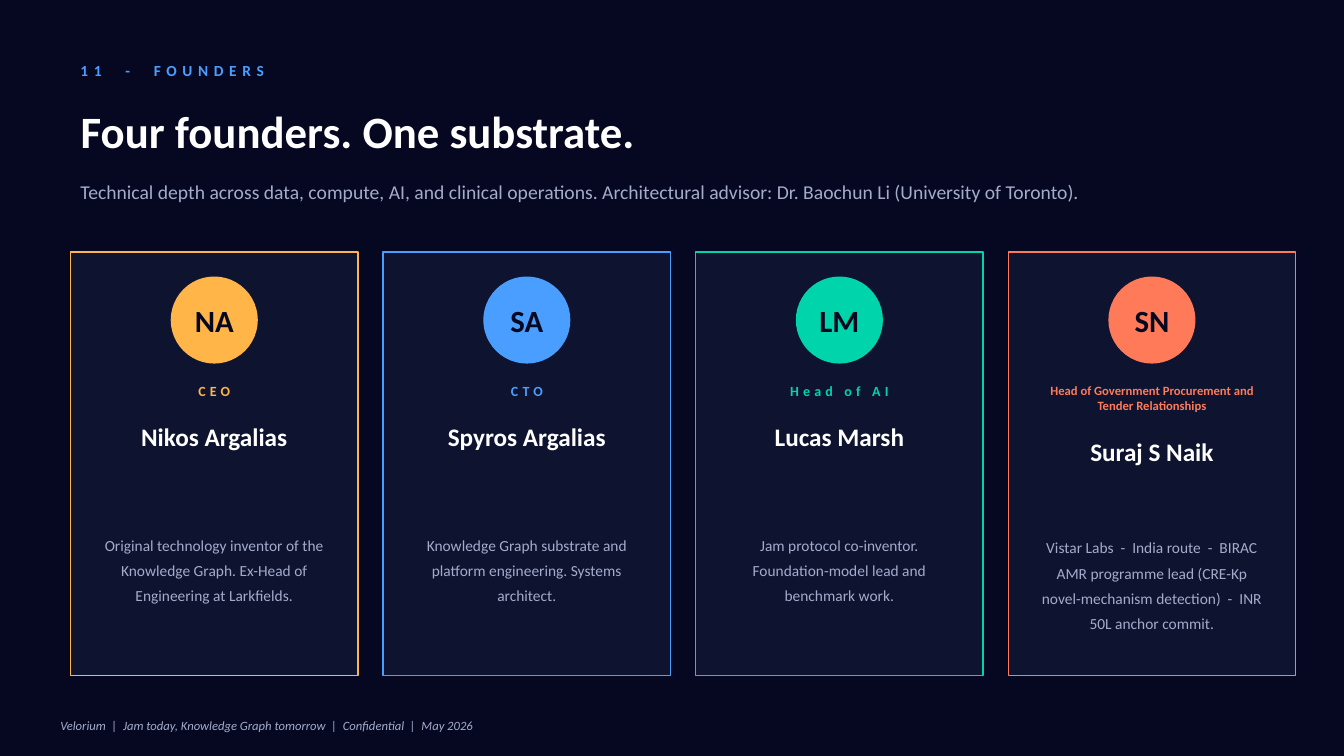
"""Build the founders slide: a heading block, four profile cards and a footer."""
from pptx import Presentation
from pptx import util as u
from pptx.dml import color
from pptx.enum import shapes, text

COLORS = {
    "ground": "050820", "card": "0E1430", "white": "FFFFFF", "muted": "A4ACCB",
    "amber": "FFB547", "blue": "4A9EFF", "green": "00D4AA", "coral": "FF7A59",
}

STYLES = {
    "kicker": {"size": u.Pt(11), "bold": True},
    "title": {"size": u.Pt(32), "bold": True},
    "subtitle": {"size": u.Pt(14), "bold": False},
    "initials": {"size": u.Pt(22), "bold": True},
    "role": {"size": u.Pt(10), "bold": True},
    "long_role": {"size": u.Pt(9), "bold": True},
    "name": {"size": u.Pt(18), "bold": True},
    "bio": {"size": u.Pt(11), "bold": False},
    "footer": {"size": u.Pt(9), "italic": True},
}
TRACKING = {"kicker": 4, "role": 3}

FOUNDERS = [
    ("NA", "CEO", "Nikos Argalias", "amber",
     "Original technology inventor of the Knowledge Graph. "
     "Ex-Head of Engineering at Larkfields."),
    ("SA", "CTO", "Spyros Argalias", "blue",
     "Knowledge Graph substrate and platform engineering. Systems architect."),
    ("LM", "Head of AI", "Lucas Marsh", "green",
     "Jam protocol co-inventor. Foundation-model lead and benchmark work."),
    ("SN", "Head of Government Procurement and Tender Relationships",
     "Suraj S Naik", "coral",
     "Vistar Labs  -  India route  -  BIRAC AMR programme lead "
     "(CRE-Kp novel-mechanism detection)  -  INR 50L anchor commit."),
]


class Deck:
    """Hold the style and current slide, placing elements on a grid of 0.1 inch cells."""

    cell = u.Inches(0.1)
    font = "Calibri"

    def __init__(self):
        """Open a wide presentation with one title-only slide."""
        self.prs = Presentation()
        self.prs.slide_width = u.Inches(13.33)
        self.prs.slide_height = u.Inches(7.5)
        self.s = self.prs.slides.add_slide(self.prs.slide_layouts[5])
        self.paint(self.s.background.fill, "ground")

    def grid(self, *cells):
        """Turn grid cells into lengths."""
        return [u.Emu(round(n * self.cell)) for n in cells]

    def paint(self, fill, name):
        """Fill with a named colour."""
        fill.solid()
        fill.fore_color.rgb = color.RGBColor.from_string(COLORS[name])

    def set_text(self, sp, words, style, ink, align="LEFT", leading=None):
        """Put one styled paragraph into a shape."""
        tf = sp.text_frame
        frame = {"word_wrap": True, "auto_size": text.MSO_AUTO_SIZE.NONE,
                 "vertical_anchor": text.MSO_ANCHOR.MIDDLE}
        p = tf.paragraphs[0]
        para = {"alignment": getattr(text.PP_ALIGN, align), "line_spacing": leading}
        r = p.add_run()
        r.text = words
        for target, values in ((tf, frame), (p, para),
                               (r.font, {"name": self.font, **STYLES[style]})):
            for key, value in values.items():
                setattr(target, key, value)
        self.paint(r.font.fill, ink)
        if style in TRACKING:
            r.font._element.set("spc", str(TRACKING[style] * 100))

    def title(self, box, words):
        """Move and format the title placeholder."""
        sp = self.s.shapes.title
        for key, value in zip(("left", "top", "width", "height"), self.grid(*box)):
            setattr(sp, key, value)
        self.set_text(sp, words, "title", "white")

    def label(self, box, words, style, ink, **para):
        """Add a text box."""
        sp = self.s.shapes.add_textbox(*self.grid(*box))
        self.set_text(sp, words, style, ink, **para)

    def shape(self, kind, box, fill, line):
        """Add a filled and outlined shape."""
        sp = self.s.shapes.add_shape(getattr(shapes.MSO_SHAPE, kind), *self.grid(*box))
        sp.shadow.inherit = False
        self.paint(sp.fill, fill)
        self.paint(sp.line.fill, line)
        sp.line.width = u.Pt(1)

    def card(self, col, initials, role, name, accent, bio):
        """Add one founder card; a role of two lines pushes the rest down."""
        is_long = len(role) > 20
        drop = 1.5 if is_long else 0
        role_style = "long_role" if is_long else "role"
        self.shape("RECTANGLE", (col, 25, 28.5, 42), "card", accent)
        self.shape("OVAL", (col + 10, 27.5, 8.5, 8.5), accent, accent)
        for box, words, style, ink, leading in (
            ((col + 10, 28.3, 8.5, 7), initials, "initials", "ground", None),
            ((col + 1.5, 37, 25.5, 3.5 + drop), role, role_style, accent, None),
            ((col + 1.5, 40.5 + drop, 25.5, 5.5), name, "name", "white", None),
            ((col + 2, 47 + drop, 24.5, 18.5), bio, "bio", "muted", u.Pt(18)),
        ):
            self.label(box, words, style, ink, align="CENTER", leading=leading)


def main():
    """Compose and save the slide."""
    deck = Deck()
    deck.label((7, 5.5, 80, 3), "11  -  FOUNDERS", "kicker", "blue")
    deck.title((7, 9.5, 120, 7), "Four founders. One substrate.")
    deck.label((7, 17, 120, 4),
               "Technical depth across data, compute, AI, and clinical operations. "
               "Architectural advisor: Dr. Baochun Li (University of Toronto).",
               "subtitle", "muted")
    for i, founder in enumerate(FOUNDERS):
        deck.card(7 + 31 * i, *founder)
    deck.label((5, 70.5, 123, 3),
               "Velorium  |  Jam today, Knowledge Graph tomorrow  |  Confidential  |  May 2026",
               "footer", "muted")
    deck.prs.save("out.pptx")


if __name__ == "__main__":
    main()
